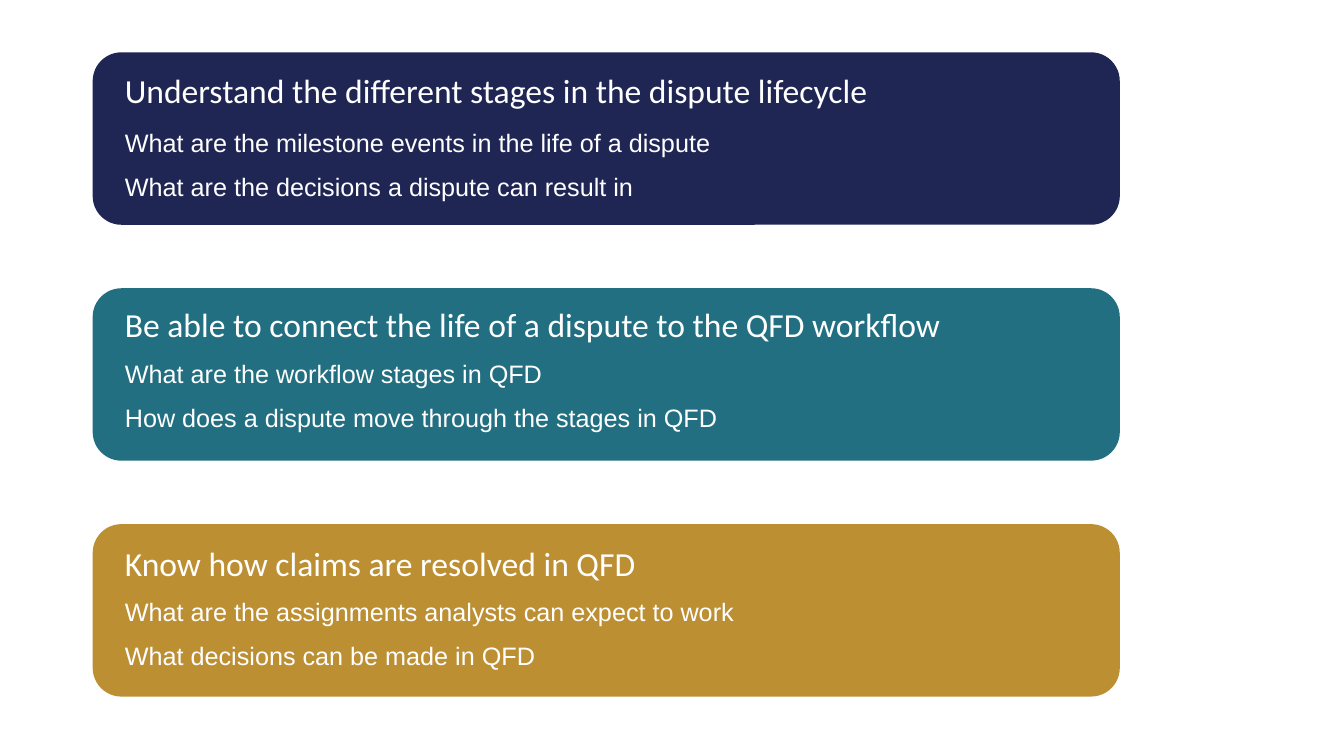
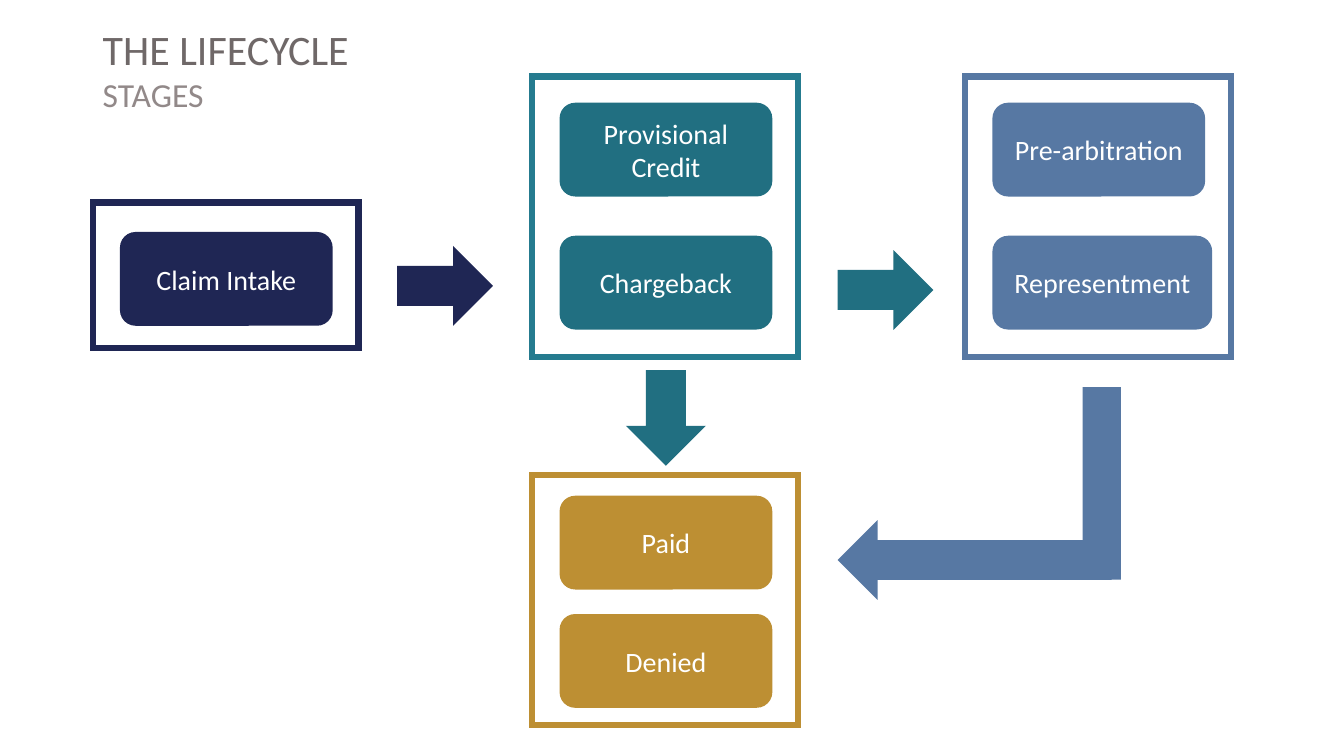
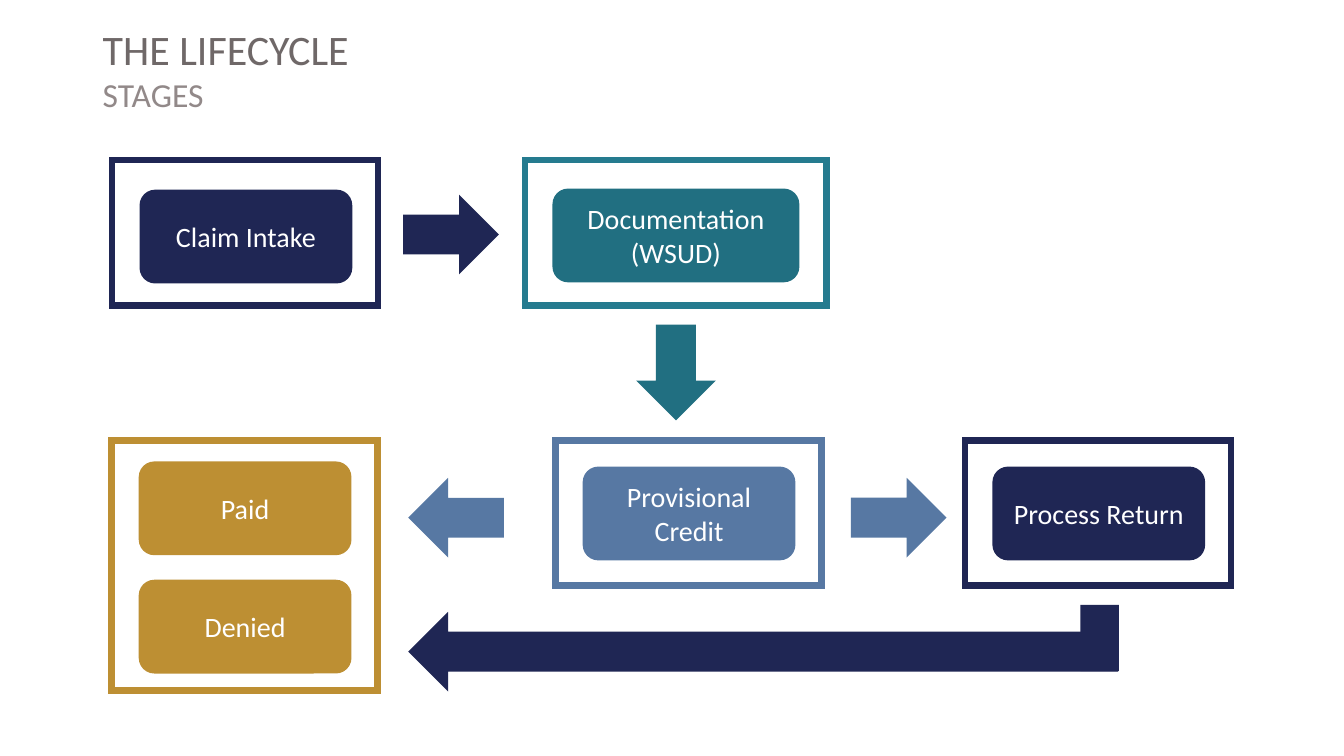
from dataclasses import dataclass

import lxml.etree
import pptx
import pptx.dml.color
import pptx.enum.shapes
import pptx.enum.text
import pptx.oxml.ns
import pptx.presentation
import pptx.shapes.autoshape
import pptx.slide
import pptx.text.text
import pptx.util

Pt = pptx.util.Pt
RGBColor = pptx.dml.color.RGBColor
Shapes = pptx.enum.shapes.MSO_SHAPE
Anchor = pptx.enum.text.MSO_ANCHOR
Align = pptx.enum.text.PP_ALIGN


@dataclass(frozen=True)
class Theme:
    navy: str = "1F2654"
    teal: str = "216F81"
    teal_outline: str = "257B8F"
    gold: str = "BD8F33"
    blue: str = "5778A3"
    white: str = "FFFFFF"
    title: str = "6F6868"
    subtitle: str = "928989"
    heading_font: str = "Calibri"
    body_font: str = "Arial"
    title_size: float = 30
    heading_size: float = 24
    stage_size: float = 20
    body_size: float = 18
    outline_width: float = 4.5


THEME = Theme()


@dataclass(frozen=True)
class Box:
    left: float
    top: float
    width: float
    height: float


@dataclass(frozen=True)
class Card:
    color: str
    heading: str
    details: tuple[str, ...]
    heading_offset: float
    details_offset: float


@dataclass(frozen=True)
class Stage:
    label: str
    width: float = 152
    padding: float = 4


@dataclass(frozen=True)
class Group:
    box: Box
    color: str
    stages: tuple[Stage, ...]
    stage_offset: float
    stage_pitch: float = 0
    outline: str | None = None


@dataclass(frozen=True)
class Arrow:
    left: float
    top: float
    color: str
    rotation: float = 0
    length: float = 68.4


@dataclass(frozen=True)
class Stem:
    box: Box
    color: str


CARD_LEFT, CARD_TOP, CARD_PITCH = 66.2, 37.4, 168.5
CARD_WIDTH, CARD_HEIGHT = 733.7, 123.2
TEXT_LEFT = 82.1
STAGE_INSET, STAGE_HEIGHT = 19.5, 67
ARROW_HEIGHT = 57
STEM_WIDTH = 27.4

CARDS = (
    Card(THEME.navy, "Understand the different stages in the dispute lifecycle",
         ("What are the milestone events in the life of a dispute",
          "What are the decisions a dispute can result in"), 8.6, 48.2),
    Card(THEME.teal, "Be able to connect the life of a dispute to the QFD workflow",
         ("What are the workflow stages in QFD",
          "How does a dispute move through the stages in QFD"), 7.2, 44.6),
    Card(THEME.gold, "Know how claims are resolved in QFD",
         ("What are the assignments analysts can expect to work",
          "What decisions can be made in QFD"), 9.4, 46.1),
)

CLAIM_INTAKE = (Stage("Claim Intake"),)
PROVISIONAL_CREDIT = Stage("Provisional Credit", padding=22)
OUTCOMES = (Stage("Paid"), Stage("Denied"))

CHARGEBACK_GROUPS = (
    Group(Box(66.2, 144.7, 190, 103.7), THEME.navy, CLAIM_INTAKE, 21),
    Group(Box(380.2, 54.7, 190, 200.2), THEME.teal,
          (PROVISIONAL_CREDIT, Stage("Chargeback")), 18.7, 95, THEME.teal_outline),
    Group(Box(689.4, 54.7, 190, 200.2), THEME.blue,
          (Stage("Pre-arbitration"), Stage("Representment", 157)), 18.7, 95),
    Group(Box(380.2, 339.1, 190, 178.6), THEME.gold, OUTCOMES, 15, 84.5),
)
CHARGEBACK_ARROWS = (
    Arrow(283.7, 175.7, THEME.navy),
    Arrow(598.3, 178.6, THEME.teal),
    Arrow(598.3, 371.5, THEME.blue, 180, 195.8),
    Arrow(441.4, 270, THEME.teal, 90),
)
CHARGEBACK_STEM = Stem(Box(773.3, 276.5, STEM_WIDTH, 137.5), THEME.blue)

DOCUMENTATION_GROUPS = (
    Group(Box(80.2, 114.5, 190, 103.7), THEME.navy, CLAIM_INTAKE, 21),
    Group(Box(375.1, 114.5, 215.3, 103.7), THEME.teal,
          (Stage("Documentation (WSUD)", 176.4),), 20.2, 0, THEME.teal_outline),
    Group(Box(396.7, 314.6, 190, 103.7), THEME.blue, (PROVISIONAL_CREDIT,), 18.7),
    Group(Box(689.4, 314.6, 190, 103.7), THEME.navy, (Stage("Process Return"),), 18.7),
    Group(Box(79.6, 314.6, 190, 178.6), THEME.gold, OUTCOMES, 15, 84.5),
)
DOCUMENTATION_ARROWS = (
    Arrow(288, 139, THEME.navy),
    Arrow(607.7, 341.3, THEME.blue),
    Arrow(291.6, 341.3, THEME.blue, 180),
    Arrow(291.6, 437, THEME.navy, 180, 506.9),
    Arrow(448.6, 237.6, THEME.teal, 90),
)
DOCUMENTATION_STEM = Stem(Box(771.8, 432, STEM_WIDTH, 47.5), THEME.navy)


def set_font(paragraph: pptx.text.text._Paragraph, name: str, size: float) -> None:
    paragraph.font.name = name
    paragraph.font.size = Pt(size)
    paragraph.font.color.rgb = RGBColor.from_string(THEME.white)


def add_filled(slide: pptx.slide.Slide, kind: Shapes, box: Box,
               color: str) -> pptx.shapes.autoshape.Shape:
    shape = slide.shapes.add_shape(
        kind, Pt(box.left), Pt(box.top), Pt(box.width), Pt(box.height))
    shape.shadow.inherit = False
    shape.fill.solid()
    shape.fill.fore_color.rgb = RGBColor.from_string(color)
    shape.line.fill.background()
    return shape


def add_outline(slide: pptx.slide.Slide, box: Box, color: str) -> None:
    shape = add_filled(slide, Shapes.RECTANGLE, box, color)
    shape.fill.background()
    shape.line.color.rgb = RGBColor.from_string(color)
    shape.line.width = Pt(THEME.outline_width)
    line = shape.element.spPr.find(pptx.oxml.ns.qn("a:ln"))
    lxml.etree.SubElement(line, pptx.oxml.ns.qn("a:miter"), lim="800000")


def add_text(slide: pptx.slide.Slide, box: Box, lines: tuple[str, ...],
             font: str, size: float, space_after: float) -> None:
    text_box = slide.shapes.add_textbox(
        Pt(box.left), Pt(box.top), Pt(box.width), Pt(box.height))
    frame = text_box.text_frame
    frame.word_wrap = True
    frame.vertical_anchor = Anchor.MIDDLE
    frame.text = "\n".join(lines)
    for paragraph in frame.paragraphs:
        paragraph.space_after = Pt(space_after)
        set_font(paragraph, font, size)


def add_card(slide: pptx.slide.Slide, card: Card, top: float) -> None:
    add_filled(slide, Shapes.ROUNDED_RECTANGLE,
               Box(CARD_LEFT, top, CARD_WIDTH, CARD_HEIGHT), card.color)
    add_text(slide, Box(TEXT_LEFT, top + card.heading_offset, 685, 36.4),
             (card.heading,), THEME.heading_font, THEME.heading_size, 0)
    add_text(slide, Box(TEXT_LEFT, top + card.details_offset, 475, 63.4),
             card.details, THEME.body_font, THEME.body_size, 10)


def add_title(slide: pptx.slide.Slide) -> None:
    title = slide.shapes.title
    title.left, title.top = Pt(66.2), Pt(11.5)
    title.width, title.height = Pt(828), Pt(89.3)
    frame = title.text_frame
    frame.vertical_anchor = Anchor.TOP
    frame.auto_size = pptx.enum.text.MSO_AUTO_SIZE.NONE
    frame.margin_top = Pt(5)
    paragraph = frame.paragraphs[0]
    paragraph.alignment = Align.LEFT
    paragraph.font.name = THEME.heading_font
    for text, size, color in (("THE LIFECYCLE", THEME.title_size, THEME.title),
                              ("STAGES", THEME.heading_size, THEME.subtitle)):
        if paragraph.runs:
            paragraph.add_line_break()
        run = paragraph.add_run()
        run.text = text
        run.font.size = Pt(size)
        run.font.color.rgb = RGBColor.from_string(color)


def add_stage(slide: pptx.slide.Slide, stage: Stage, left: float, top: float,
              color: str) -> None:
    shape = add_filled(slide, Shapes.ROUNDED_RECTANGLE,
                       Box(left, top, stage.width, STAGE_HEIGHT), color)
    frame = shape.text_frame
    frame.word_wrap = True
    frame.vertical_anchor = Anchor.MIDDLE
    frame.margin_left = frame.margin_right = Pt(stage.padding)
    frame.margin_top = frame.margin_bottom = 0
    frame.text = stage.label
    paragraph = frame.paragraphs[0]
    paragraph.alignment = Align.CENTER
    set_font(paragraph, THEME.heading_font, THEME.stage_size)


def add_group(slide: pptx.slide.Slide, group: Group) -> None:
    add_outline(slide, group.box, group.outline or group.color)
    for index, stage in enumerate(group.stages):
        top = group.box.top + group.stage_offset + index * group.stage_pitch
        add_stage(slide, stage, group.box.left + STAGE_INSET, top, group.color)


def add_arrow(slide: pptx.slide.Slide, arrow: Arrow) -> None:
    box = Box(arrow.left, arrow.top, arrow.length, ARROW_HEIGHT)
    shape = add_filled(slide, Shapes.RIGHT_ARROW, box, arrow.color)
    shape.rotation = arrow.rotation


def build_objectives(presentation: pptx.presentation.Presentation) -> None:
    slide = presentation.slides.add_slide(presentation.slide_layouts[6])
    for index, card in enumerate(CARDS):
        add_card(slide, card, CARD_TOP + index * CARD_PITCH)


def build_lifecycle(presentation: pptx.presentation.Presentation,
                    groups: tuple[Group, ...], arrows: tuple[Arrow, ...],
                    stem: Stem) -> None:
    slide = presentation.slides.add_slide(presentation.slide_layouts[5])
    add_title(slide)
    for group in groups:
        add_group(slide, group)
    for arrow in arrows:
        add_arrow(slide, arrow)
    add_filled(slide, Shapes.RECTANGLE, stem.box, stem.color)


def main() -> None:
    presentation = pptx.Presentation()
    presentation.slide_width = Pt(960)
    presentation.slide_height = Pt(540)
    build_objectives(presentation)
    build_lifecycle(presentation, CHARGEBACK_GROUPS, CHARGEBACK_ARROWS,
                    CHARGEBACK_STEM)
    build_lifecycle(presentation, DOCUMENTATION_GROUPS, DOCUMENTATION_ARROWS,
                    DOCUMENTATION_STEM)
    presentation.save("out.pptx")


if __name__ == "__main__":
    main()
